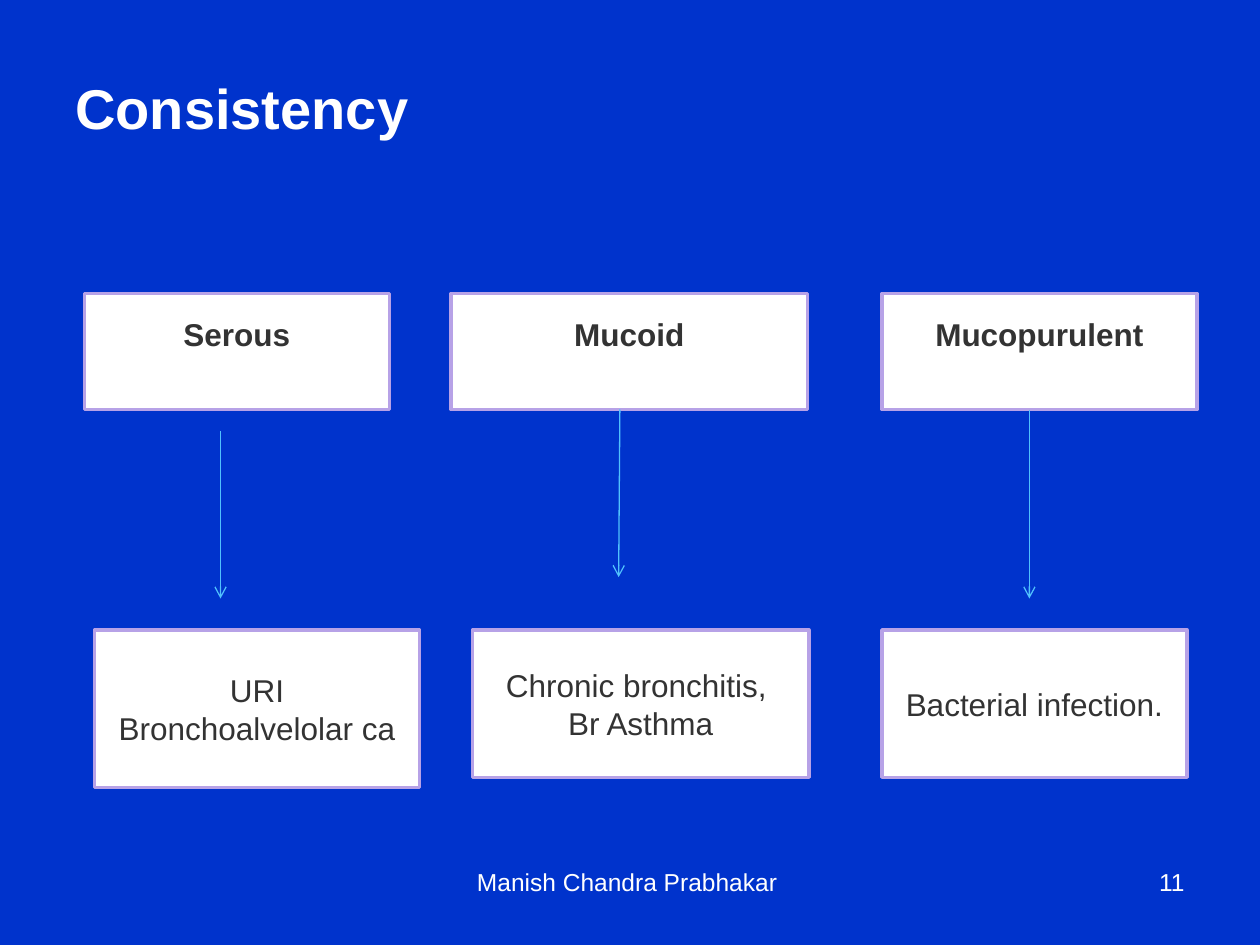
from lxml import etree
from pptx import Presentation
from pptx.dml.color import RGBColor
from pptx.enum.shapes import MSO_CONNECTOR, MSO_SHAPE
from pptx.enum.text import MSO_ANCHOR, PP_ALIGN
from pptx.oxml.ns import qn
from pptx.util import Inches, Pt

COLORS = {
    name: RGBColor.from_string(value)
    for name, value in {
        "background": "0033CC",
        "white": "FFFFFF",
        "border": "B7A2E7",
        "text": "333333",
        "arrow": "51C2FD",
    }.items()
}


def write_text(shape, lines, color, size, bold=False,
               align=PP_ALIGN.CENTER, anchor=MSO_ANCHOR.MIDDLE):
    frame = shape.text_frame
    frame.word_wrap = True
    frame.vertical_anchor = anchor
    frame.text = "\n".join(lines)
    font_format = {"name": "Arial", "size": Pt(size), "bold": bold}
    for paragraph in frame.paragraphs:
        paragraph.alignment = align
        for attribute, value in font_format.items():
            setattr(paragraph.font, attribute, value)
        paragraph.font.color.rgb = COLORS[color]


def add_box(left, top, width, height, lines, bold=False):
    """Add a white bordered box and return it."""
    box = slide.shapes.add_shape(
        MSO_SHAPE.RECTANGLE, Inches(left), Inches(top), Inches(width), Inches(height))
    box.shadow.inherit = False
    box.fill.solid()
    box.fill.fore_color.rgb = COLORS["white"]
    box.line.color.rgb = COLORS["border"]
    box.line.width = Pt(2)
    write_text(box, lines, "text", 18, bold)
    return box


presentation = Presentation()
presentation.slide_width = Inches(10)
presentation.slide_height = Inches(7.5)
slide = presentation.slides.add_slide(presentation.slide_layouts[6])
slide.background.fill.solid()
slide.background.fill.fore_color.rgb = COLORS["background"]

# Sputum types: left, width, label
for left, width, label in [
    (0.67, 2.42, "Serous"),
    (3.58, 2.83, "Mucoid"),
    (7, 2.5, "Mucopurulent"),
]:
    type_box = add_box(left, 2.33, width, 0.92, [label], bold=True)
    type_box.text_frame.margin_bottom = Inches(0.33)  # label sits above the middle

# Causes: left, width, height, lines
for left, width, height, lines in [
    (0.75, 2.58, 1.25, ["URI", "Bronchoalvelolar ca"]),
    (3.75, 2.67, 1.17, ["Chronic bronchitis, ", "Br Asthma"]),
    (7, 2.42, 1.17, ["Bacterial infection."]),
]:
    add_box(left, 5, width, height, lines)

# Arrows from type to cause: start x, start y, end x, end y
for ends in [
    (1.75, 3.42, 1.75, 4.75),
    (4.92, 3.25, 4.91, 4.58),
    (8.17, 3.25, 8.17, 4.75),
]:
    arrow = slide.shapes.add_connector(
        MSO_CONNECTOR.STRAIGHT, *[Inches(value) for value in ends])
    arrow.line.color.rgb = COLORS["arrow"]
    arrow.line.width = Pt(0.75)
    etree.SubElement(arrow.line._get_or_add_ln(), qn("a:tailEnd"), type="arrow")
    etree.SubElement(arrow._element.spPr, qn("a:effectLst"))

# Title, page number and footer
for left, top, width, height, text, size, bold, align, anchor in [
    (0.5, 0.3, 8.17, 0.87, "Consistency", 32, True, PP_ALIGN.LEFT, MSO_ANCHOR.BOTTOM),
    (7.17, 6.83, 2.33, 0.52, "11", 14, False, PP_ALIGN.RIGHT, MSO_ANCHOR.TOP),
    (3.42, 6.83, 3.17, 0.52, "Manish Chandra Prabhakar ", 14, False,
     PP_ALIGN.CENTER, MSO_ANCHOR.TOP),
]:
    text_box = slide.shapes.add_textbox(
        Inches(left), Inches(top), Inches(width), Inches(height))
    write_text(text_box, [text], "white", size, bold, align, anchor)

presentation.save("out.pptx")
